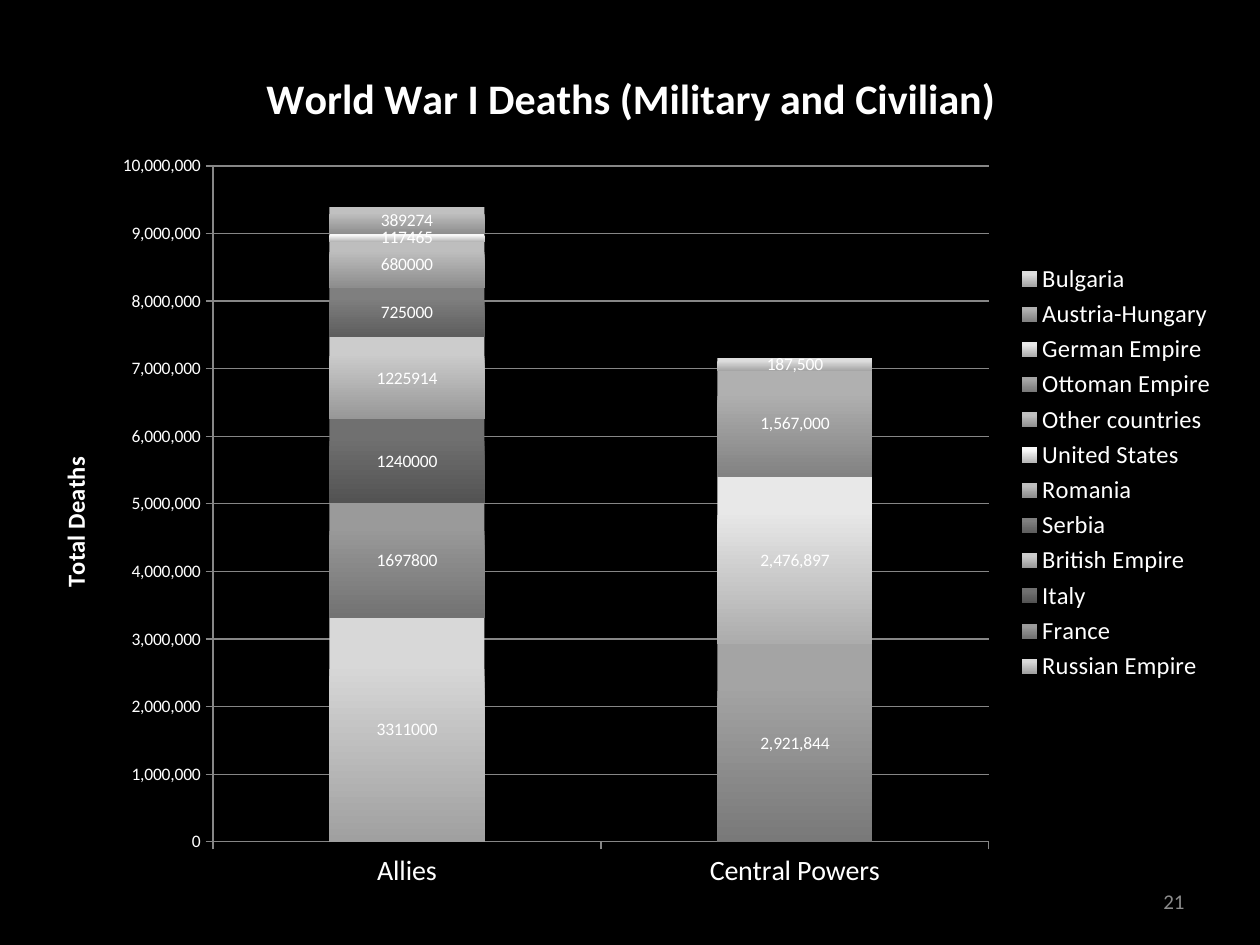
from lxml import etree
from pptx import Presentation
from pptx.chart.data import CategoryChartData
from pptx.dml.color import RGBColor
from pptx.enum.chart import XL_CHART_TYPE, XL_LEGEND_POSITION, XL_TICK_MARK
from pptx.enum.text import MSO_ANCHOR, PP_ALIGN
from pptx.oxml.ns import qn
from pptx.util import Pt

PX = 914400 // 126
STACKED = XL_CHART_TYPE.COLUMN_STACKED
RIGHT = XL_LEGEND_POSITION.RIGHT
OUT, NONE = XL_TICK_MARK.OUTSIDE, XL_TICK_MARK.NONE
MIDDLE, ALIGN_RIGHT = MSO_ANCHOR.MIDDLE, PP_ALIGN.RIGHT

FONT = "Calibri"
BLACK = RGBColor(0, 0, 0)
WHITE = RGBColor(255, 255, 255)
RULE = RGBColor(134, 134, 134)
MUTED = RGBColor(140, 140, 140)
FADE = 0.74

FRAME = (33, 39, 1196, 867)
PLOT = (213, 166, 776, 676)
PAGE = (903, 876, 294, 50)

# name, deaths, grey level at the top of the bar
ALLIES = [
    ("Russian Empire", 3311000, 216),
    ("France", 1697800, 154),
    ("Italy", 1240000, 112),
    ("British Empire", 1225914, 204),
    ("Serbia", 725000, 127),
    ("Romania", 680000, 190),
    ("United States", 117465, 248),
    ("Other countries", 389274, 192),
]
POWERS = [
    ("Ottoman Empire", 2921844, 164),
    ("German Empire", 2476897, 232),
    ("Austria-Hungary", 1567000, 176),
    ("Bulgaria", 187500, 221),
]


def style(font, size, color=WHITE, bold=False):
    font.name, font.size, font.bold = FONT, Pt(size), bold
    font.color.rgb = color


def put_title(owner, text, size):
    frame = owner.text_frame
    run = frame.paragraphs[0].add_run()
    run.text = text
    style(run.font, size, bold=True)


def grey(level):
    return RGBColor(level, level, level)


def shade(fill, level):
    """Fade a bar from its grey level down to a darker one."""
    fill.gradient()
    fill.gradient_angle = 270
    first, last = fill.gradient_stops
    first.color.rgb, first.position = grey(level), 0.2
    last.color.rgb, last.position = grey(round(level * FADE)), 1


def place_plot(chart):
    """Fix the inner plot area as fractions of the chart frame."""
    area = chart.element.find(".//" + qn("c:plotArea"))
    for old in area.findall(qn("c:layout")):
        area.remove(old)
    layout = etree.Element(qn("c:layout"))
    area.insert(0, layout)
    manual = etree.SubElement(layout, qn("c:manualLayout"))
    left, top, width, height = FRAME
    spots = [
        ("layoutTarget", "inner"), ("xMode", "edge"), ("yMode", "edge"),
        ("x", (PLOT[0] - left) / width), ("y", (PLOT[1] - top) / height),
        ("w", PLOT[2] / width), ("h", PLOT[3] / height),
    ]
    for tag, value in spots:
        etree.SubElement(manual, qn("c:" + tag)).set("val", str(value))


def style_axis(axis, size):
    axis.major_tick_mark, axis.minor_tick_mark = OUT, NONE
    style(axis.tick_labels.font, size)
    axis.format.line.color.rgb = RULE
    axis.format.line.width = Pt(0.75)


def style_axes(chart):
    style_axis(chart.category_axis, 16)
    axis = chart.value_axis
    style_axis(axis, 10)
    axis.minimum_scale, axis.maximum_scale = 0, 10000000
    axis.major_unit = 1000000
    axis.tick_labels.number_format = "#,##0"
    axis.tick_labels.number_format_is_linked = False
    axis.has_major_gridlines = True
    line = axis.major_gridlines.format.line
    line.color.rgb, line.width = RULE, Pt(0.75)
    put_title(axis.axis_title, "Total Deaths", 14)


def style_bars(chart):
    plot = chart.plots[0]
    plot.gap_width, plot.overlap = 150, 100
    plot.vary_by_categories = False
    for index, (bar, row) in enumerate(zip(plot.series, ALLIES + POWERS)):
        shade(bar.format.fill, row[2])
        labels = bar.data_labels
        labels.show_value = True
        labels.number_format = "General" if index < len(ALLIES) else "#,##0"
        labels.number_format_is_linked = False
        style(labels.font, 10)


def add_deaths(slide):
    data = CategoryChartData()
    data.categories = ["Allies", "Central Powers"]
    for name, deaths, _ in ALLIES:
        data.add_series(name, (deaths, None))
    for name, deaths, _ in POWERS:
        data.add_series(name, (None, deaths))
    box = [n * PX for n in FRAME]
    chart = slide.shapes.add_chart(STACKED, *box, data).chart
    style(chart.font, 10)
    put_title(chart.chart_title, "World War I Deaths (Military and Civilian)", 24)
    chart.chart_title.include_in_layout = False
    chart.has_legend = True
    chart.legend.position = RIGHT
    chart.legend.include_in_layout = False
    style(chart.legend.font, 14)
    style_axes(chart)
    style_bars(chart)
    place_plot(chart)


def add_page(slide, text):
    frame = slide.shapes.add_textbox(*[n * PX for n in PAGE]).text_frame
    frame.word_wrap = True
    frame.vertical_anchor = MIDDLE
    para = frame.paragraphs[0]
    para.alignment = ALIGN_RIGHT
    run = para.add_run()
    run.text = text
    style(run.font, 12, MUTED)


def main():
    deck = Presentation()
    deck.slide_width, deck.slide_height = 1260 * PX, 945 * PX
    slide = deck.slides.add_slide(deck.slide_layouts[6])
    slide.background.fill.solid()
    slide.background.fill.fore_color.rgb = BLACK
    add_page(slide, "21")
    add_deaths(slide)
    deck.save("out.pptx")


if __name__ == "__main__":
    main()
